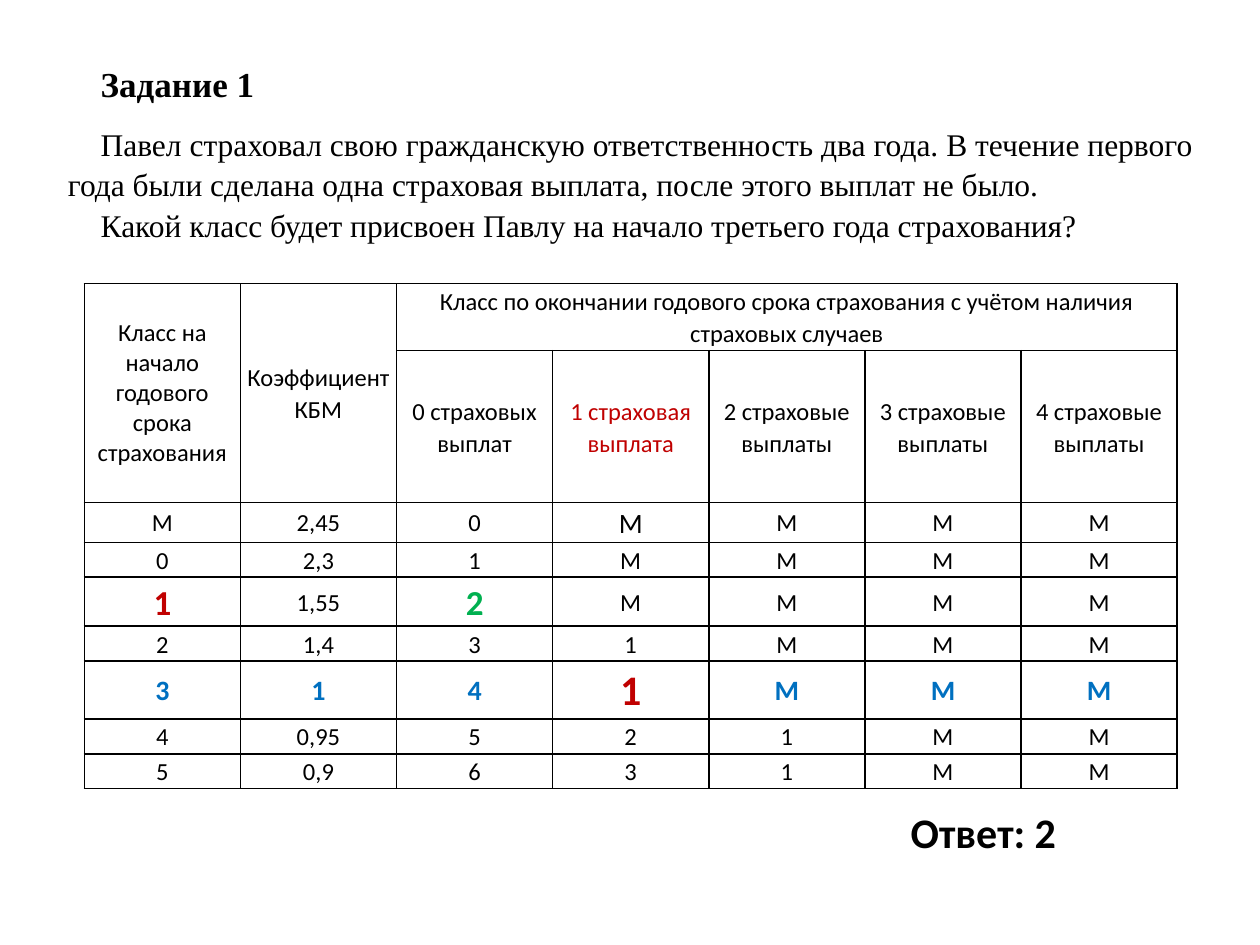
from lxml import etree
from pptx import Presentation
from pptx.dml.color import RGBColor
from pptx.enum.text import MSO_ANCHOR, MSO_AUTO_SIZE, PP_ALIGN
from pptx.oxml.ns import qn
from pptx.util import Cm, Pt

MIDDLE = MSO_ANCHOR.MIDDLE
GROW = MSO_AUTO_SIZE.SHAPE_TO_FIT_TEXT
LEFT, CENTER, JUSTIFY = PP_ALIGN.LEFT, PP_ALIGN.CENTER, PP_ALIGN.JUSTIFY
BLACK, RED, GREEN, BLUE = "000000", "C00000", "00B050", "0070C0"
SERIF, SANS = "Times New Roman", "Calibri"

TASK = [
    "Павел страховал свою гражданскую ответственность два года. В течение "
    "первого года были сделана одна страховая выплата, после этого выплат не было.",
    "Какой класс будет присвоен Павлу на начало третьего года страхования?",
]
START = ["Класс на начало годового", "срока страхования"]
FACTOR = ["Коэффициент КБМ"]
FINISH = ["Класс по окончании годового срока страхования с учётом наличия страховых случаев"]
CLAIMS = ["0 страховых выплат", "1 страховая выплата", "2 страховые выплаты",
          "3 страховые выплаты", "4 страховые выплаты"]
RATES = [
    "М 2,45 0 М М М М",
    "0 2,3 1 М М М М",
    "1 1,55 2 М М М М",
    "2 1,4 3 1 М М М",
    "3 1 4 1 М М М",
    "4 0,95 5 2 1 М М",
    "5 0,9 6 3 1 М М",
]
KEY_ROW = 4
MARKS = {
    (0, 3): dict(size=16),
    (2, 0): dict(size=20, color=RED, bold=True),
    (2, 2): dict(size=20, color=GREEN, bold=True),
    (KEY_ROW, 3): dict(size=24, color=RED, bold=True),
}


def rgb(code):
    return RGBColor.from_string(code)


def write(frame, lines, size=14, font=SANS, color=BLACK, bold=False, align=LEFT,
          space=None, before=0, after=0, indent=0):
    for i, line in enumerate(lines):
        para = frame.paragraphs[0] if i == 0 else frame.add_paragraph()
        para.alignment = align
        para.space_before, para.space_after = Pt(before), Pt(after)
        if space:
            para.line_spacing = space
        if indent:
            props = para._p.get_or_add_pPr()
            props.set("marL", "0")
            props.set("indent", str(Cm(indent)))
        run = para.add_run()
        run.text = line
        run.font.size, run.font.name, run.font.bold = Pt(size), font, bold
        run.font.color.rgb = rgb(color)


def label(slide, box, lines, wrap=False, **style):
    frame = slide.shapes.add_textbox(*map(Cm, box)).text_frame
    frame.word_wrap = wrap
    frame.auto_size = GROW
    write(frame, lines, **style)


def frame_cell(cell):
    """Clear the cell's fill, tighten its margins and rule all four sides."""
    cell.margin_left = cell.margin_right = Cm(0.03)
    cell.margin_top = cell.margin_bottom = Cm(0.03)
    cell.vertical_anchor = MIDDLE
    props = cell._tc.get_or_add_tcPr()
    for side in ("a:lnL", "a:lnR", "a:lnT", "a:lnB"):
        line = etree.SubElement(props, qn(side), w=str(Pt(1)))
        fill = etree.SubElement(line, qn("a:solidFill"))
        etree.SubElement(fill, qn("a:srgbClr"), val=BLACK)
    cell.fill.background()


def head(table):
    style = dict(align=CENTER, space=1.07, after=8)
    table.cell(0, 0).merge(table.cell(1, 0))
    table.cell(0, 1).merge(table.cell(1, 1))
    table.cell(0, 2).merge(table.cell(0, 6))
    write(table.cell(0, 0).text_frame, START, align=CENTER)
    write(table.cell(0, 1).text_frame, FACTOR, **style)
    write(table.cell(0, 2).text_frame, FINISH, **style)
    for i, claim in enumerate(CLAIMS):
        color = RED if i == 1 else BLACK
        write(table.cell(1, i + 2).text_frame, [claim], color=color, **style)


def body(table):
    for r, rates in enumerate(RATES):
        if r == KEY_ROW:
            base = dict(size=16, color=BLUE, bold=True, after=8)
        else:
            base = dict(before=3.8)
        for c, rate in enumerate(rates.split()):
            style = base | MARKS.get((r, c), {})
            write(table.cell(r + 2, c).text_frame, [rate],
                  align=CENTER, space=1.07, **style)


def grid(slide, box):
    heights = [1.24, 1.6] + [0.64] * len(RATES)
    shape = slide.shapes.add_table(len(heights), 7, *map(Cm, box))
    table = shape.table
    table.first_row = table.horz_banding = False
    for col in table.columns:
        col.width = Cm(box[2] / 7)
    for row, height in zip(table.rows, heights):
        row.height = Cm(height)
    for cell in table.iter_cells():
        frame_cell(cell)
    head(table)
    body(table)


def intro(slide, box):
    left, top, width, height = box
    label(slide, (left + 0.66, top, 3.63, 1.12), ["Задание 1"],
          size=20, font=SERIF, bold=True)
    label(slide, (left, top + 1.2, width, height - 1.2), TASK, wrap=True,
          size=18, font=SERIF, align=JUSTIFY, space=1.07, indent=0.66)


def main():
    deck = Presentation()
    deck.slide_width, deck.slide_height = Cm(25.4), Cm(19.05)
    slide = deck.slides.add_slide(deck.slide_layouts[6])
    grid(slide, (1.7, 5.72, 22.03, 7.32))
    intro(slide, (1.12, 1.14, 23.19, 3.92))
    label(slide, (18.11, 16.13, 3.48, 1.27), ["Ответ: 2"], size=24, bold=True)
    deck.save("out.pptx")


if __name__ == "__main__":
    main()
